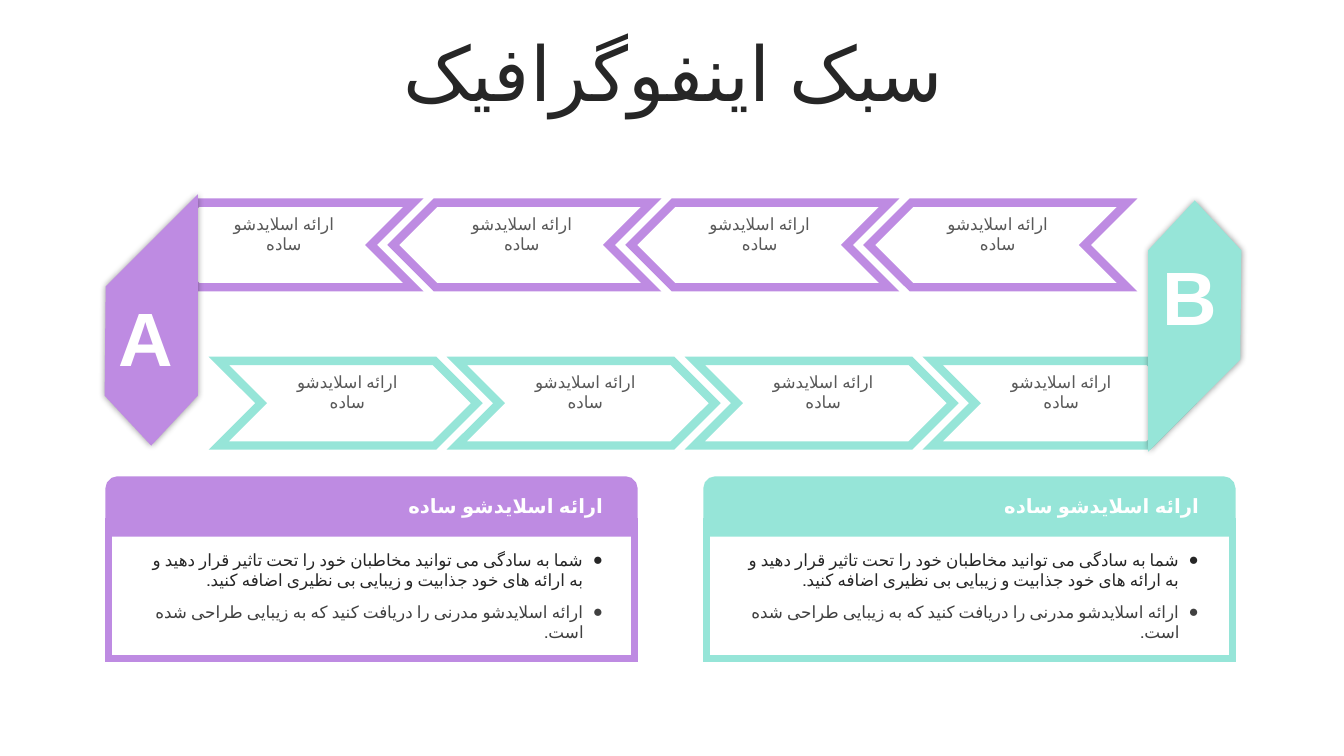
import pptx
import pptx.util
import pptx.dml.color
import pptx.enum.lang
import pptx.enum.shapes
import pptx.enum.text
import pptx.oxml
import pptx.oxml.ns

Inches = pptx.util.Inches
Pt = pptx.util.Pt
color = pptx.dml.color.RGBColor.from_string
Shape = pptx.enum.shapes.MSO_SHAPE
Align = pptx.enum.text.PP_ALIGN
Anchor = pptx.enum.text.MSO_ANCHOR
AutoSize = pptx.enum.text.MSO_AUTO_SIZE
namespace = pptx.oxml.ns.nsdecls("a")

PURPLE = "BE8BE2"
TEAL = "96E5D8"
WHITE = "FFFFFF"
LABEL = "ارائه اسلایدشو ساده"
BULLETS = [
    ("شما به سادگی می توانید مخاطبان خود را تحت تاثیر قرار دهید و به ارائه های خود جذابیت و زیبایی بی نظیری اضافه کنید.", "262626", 0),
    ("ارائه اسلایدشو مدرنی را دریافت کنید که به زیبایی طراحی شده است.", "404040", 8.5),
]


def paint(shape, fill, line, width):
    shape.shadow.inherit = False
    shape.fill.solid()
    shape.fill.fore_color.rgb = color(fill)
    shape.line.color.rgb = color(line)
    shape.line.width = Pt(width)
    shape.line._get_or_add_ln().append(pptx.oxml.parse_xml(f'<a:miter {namespace} lim="800000"/>'))


def write(paragraph, text, size, ink, align, bold=False):
    paragraph.alignment = align
    paragraph._p.get_or_add_pPr().set("rtl", "1")
    run = paragraph.add_run()
    run.text = text
    run.font.size = Pt(size)
    run.font.bold = bold
    run.font.name = "Arial"
    run.font.color.rgb = color(ink)
    run.font.language_id = pptx.enum.lang.MSO_LANGUAGE_ID.FARSI


presentation = pptx.Presentation()
presentation.slide_width = Inches(13.33)
presentation.slide_height = Inches(7.5)
slide = presentation.slides.add_slide(presentation.slide_layouts[3])
shapes = slide.shapes

title = shapes.title
title.left, title.top = Inches(0.35), Inches(0.37)
title.width, title.height = Inches(12.66), Inches(0.79)
title.text_frame.auto_size = AutoSize.NONE
title.text_frame.vertical_anchor = Anchor.MIDDLE
heading = title.text_frame.paragraphs[0]
heading.line_spacing = 0.9
heading.space_before = Pt(10)
write(heading, "سبک اینفوگرافیک", 54, "262626", Align.CENTER)

captions = []
for accent, left, top, rotation, label_left in [
    (PURPLE, 1.54, 2.01, 180, 2.21),
    (TEAL, 2.17, 3.58, 0, 2.84),
]:
    for step in range(4):
        offset = 2.36 * step
        chevron = shapes.add_shape(Shape.CHEVRON, Inches(left + offset), Inches(top), Inches(2.56), Inches(0.84))
        chevron.rotation = rotation
        paint(chevron, WHITE, accent, 6)
        captions.append((LABEL, label_left + offset, top + 0.06, 1.21, 0.5, 12, "595959", Align.CENTER, False))

for accent, letter, letter_left, letter_top, points in [
    (PURPLE, "A", 1.19, 2.84, [(1.92, 2.03), (1.92, 3.91), (1.5, 4.36), (1.08, 3.91), (1.09, 2.86)]),
    (TEAL, "B", 11.54, 2.43, [(11.43, 4.38), (11.43, 2.5), (11.85, 2.05), (12.27, 2.5), (12.26, 3.55)]),
]:
    corners = [(Inches(x), Inches(y)) for x, y in points]
    builder = shapes.build_freeform(*corners[0])
    builder.add_line_segments(corners[1:], close=True)
    marker = builder.convert_to_shape()
    paint(marker, accent, accent, 6)
    effects = marker._element.spPr.find(pptx.oxml.ns.qn("a:effectLst"))
    effects.append(pptx.oxml.parse_xml(
        f'<a:outerShdw {namespace} blurRad="63500" dist="0" dir="0" algn="ctr" rotWithShape="0">'
        '<a:srgbClr val="000000"><a:alpha val="40000"/></a:srgbClr></a:outerShdw>'
    ))
    captions.append((letter, letter_left, letter_top, 0.63, 1.01, 54, WHITE, Align.CENTER, True))

for accent, card_left, text_left, body in [
    (PURPLE, 1.08, 1.33, slide.placeholders[1]),
    (TEAL, 7.01, 7.24, slide.placeholders[2]),
]:
    card = shapes.add_shape(Shape.RECTANGLE, Inches(card_left), Inches(5.17), Inches(5.21), Inches(1.36))
    paint(card, WHITE, accent, 5)
    header = shapes.add_shape(Shape.ROUND_2_SAME_RECTANGLE, Inches(card_left), Inches(4.76), Inches(5.21), Inches(0.53))
    paint(header, accent, accent, 5)
    captions.append((LABEL, text_left, 4.85, 4.75, 0.34, 14, WHITE, Align.RIGHT, True))

    shapes.element.append(body.element)
    body.left, body.top = Inches(text_left), Inches(5.4)
    body.width, body.height = Inches(4.75), Inches(1.02)
    frame = body.text_frame
    frame.auto_size = AutoSize.NONE
    frame.vertical_anchor = Anchor.TOP
    for index, (text, ink, gap) in enumerate(BULLETS):
        paragraph = frame.add_paragraph() if index else frame.paragraphs[0]
        paragraph.space_before = Pt(gap)
        properties = paragraph._p.get_or_add_pPr()
        properties.set("marL", str(Inches(0.19)))
        properties.set("indent", str(Inches(-0.19)))
        properties.append(pptx.oxml.parse_xml(f'<a:buFont {namespace} typeface="Arial"/>'))
        properties.append(pptx.oxml.parse_xml(f'<a:buChar {namespace} char="●"/>'))
        write(paragraph, text, 12, ink, Align.RIGHT)

for text, left, top, width, height, size, ink, align, bold in captions:
    caption = shapes.add_textbox(Inches(left), Inches(top), Inches(width), Inches(height))
    caption.text_frame.word_wrap = True
    caption.text_frame.auto_size = AutoSize.SHAPE_TO_FIT_TEXT
    write(caption.text_frame.paragraphs[0], text, size, ink, align, bold)

presentation.save("out.pptx")
